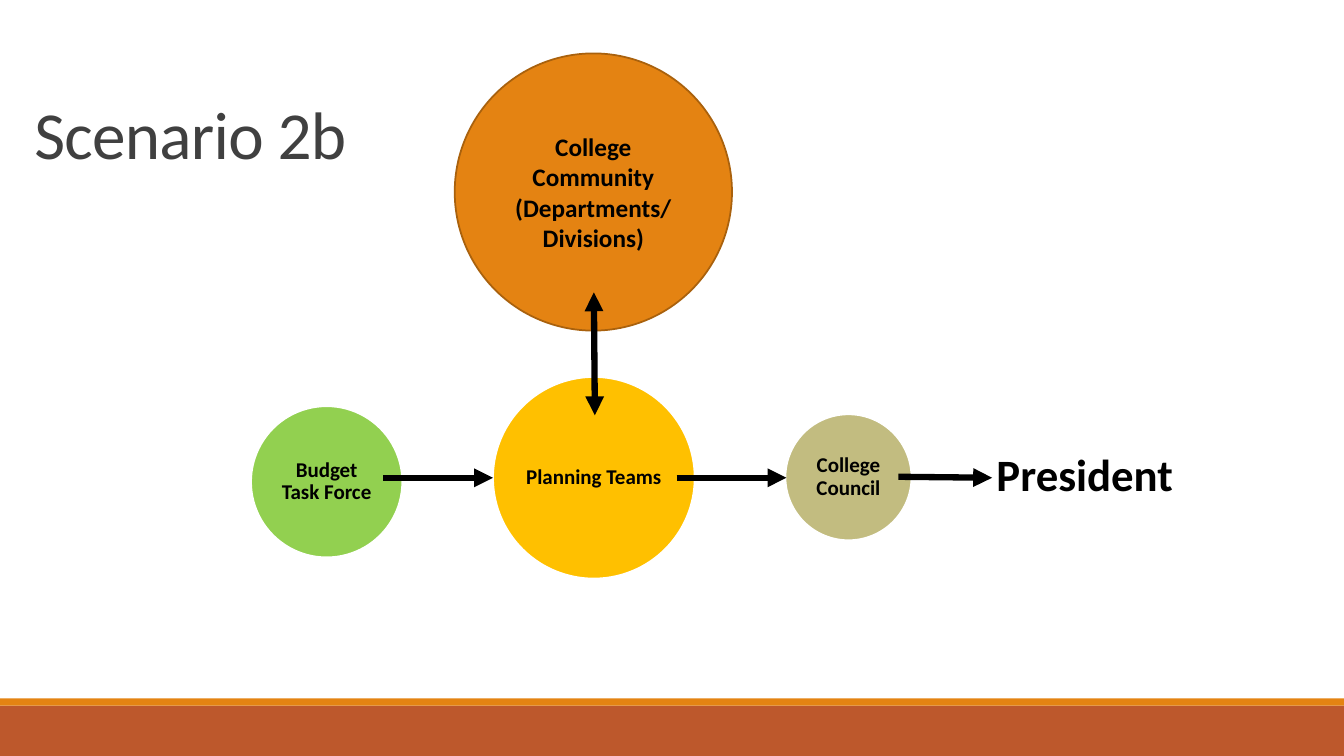
from dataclasses import dataclass
from typing import NamedTuple

from lxml import etree
from pptx import Presentation
from pptx.dml.color import RGBColor
from pptx.enum import shapes, text
from pptx.oxml.ns import qn
from pptx.util import Inches, Pt


@dataclass(frozen=True)
class Theme:
    font: str = "Calibri"
    title_color: str = "404040"
    ink: str = "000000"
    white: str = "FFFFFF"
    orange: str = "E48312"
    dark_orange: str = "A9610D"
    rust: str = "BD582C"
    green: str = "92D050"
    yellow: str = "FFC000"
    khaki: str = "C2BC80"
    title_size: float = 48
    goal_size: float = 32
    community_size: float = 18
    group_size: float = 15
    outline: float = 1.25
    arrow: float = 4.5


THEME = Theme()


class Bar(NamedTuple):
    top: float
    height: float
    fill: str


@dataclass(frozen=True)
class Circle:
    label: str
    left: float
    top: float
    size: float
    fill: str
    line: str = THEME.white
    font_size: float = THEME.group_size
    spacing: float = 0.9
    inset: float = 0.02
    preset: shapes.MSO_SHAPE = shapes.MSO_SHAPE.OVAL


class Arrow(NamedTuple):
    start: tuple[float, float]
    tip: tuple[float, float]
    both_ends: bool = False


BARS = [Bar(7, 0.5, THEME.rust), Bar(6.93, 0.07, THEME.orange)]
CIRCLES = [
    Circle("Budget Task Force", 2.49, 4.03, 1.5, THEME.green),
    Circle("Planning Teams", 4.89, 3.74, 2, THEME.yellow),
    Circle("College\nCommunity (Departments/\nDivisions)", 4.51, 0.53, 2.75,
           THEME.orange, THEME.dark_orange, THEME.community_size, 1, 0.1,
           shapes.MSO_SHAPE.FLOWCHART_CONNECTOR),
    Circle("College Council", 7.79, 4.11, 1.25, THEME.khaki),
]
ARROWS = [
    Arrow((5.89, 2.9), (5.9, 4.12), both_ends=True),
    Arrow((3.8, 4.74), (4.89, 4.74)),
    Arrow((6.71, 4.74), (7.8, 4.74)),
    Arrow((8.91, 4.73), (9.84, 4.74)),
]


def rgb(color: str) -> RGBColor:
    return RGBColor.from_string(color)


def write(tf, content: str, size: float, color: str = THEME.ink, bold: bool = True,
          align=text.PP_ALIGN.CENTER, anchor=text.MSO_ANCHOR.MIDDLE,
          spacing: float = 0.9, inset: float = 0.02) -> None:
    """Fill a text frame, one paragraph per line of content."""
    tf.text = content
    tf.word_wrap = True
    tf.auto_size = text.MSO_AUTO_SIZE.NONE
    tf.vertical_anchor = anchor
    tf.margin_left = tf.margin_right = Inches(inset)
    tf.margin_top = tf.margin_bottom = Inches(min(inset, 0.05))
    for p in tf.paragraphs:
        p.alignment = align
        p.line_spacing = spacing
        for r in p.runs:
            r.font.name = THEME.font
            r.font.size = Pt(size)
            r.font.bold = bold
            r.font.color.rgb = rgb(color)


def add_title(slide) -> None:
    sp = slide.shapes.title
    sp.left, sp.top, sp.width, sp.height = map(Inches, (0.24, 0.18, 11, 1.59))
    write(sp.text_frame, "Scenario 2b", THEME.title_size, THEME.title_color, False,
          text.PP_ALIGN.LEFT, text.MSO_ANCHOR.BOTTOM, 0.85, 0.1)
    sp.text_frame.paragraphs[0].runs[0].font._element.set("spc", "-50")


def add_bar(slide, bar: Bar, width: int) -> None:
    sp = slide.shapes.add_shape(shapes.MSO_SHAPE.RECTANGLE, 0, Inches(bar.top),
                                width, Inches(bar.height))
    sp.shadow.inherit = False
    sp.fill.solid()
    sp.fill.fore_color.rgb = rgb(bar.fill)
    sp.line.fill.background()


def add_circle(slide, circle: Circle) -> None:
    size = Inches(circle.size)
    sp = slide.shapes.add_shape(circle.preset, Inches(circle.left),
                                Inches(circle.top), size, size)
    sp.shadow.inherit = False
    sp.fill.solid()
    sp.fill.fore_color.rgb = rgb(circle.fill)
    sp.line.color.rgb = rgb(circle.line)
    sp.line.width = Pt(THEME.outline)
    write(sp.text_frame, circle.label, circle.font_size,
          spacing=circle.spacing, inset=circle.inset)


def add_president(slide) -> None:
    sp = slide.shapes.add_textbox(*map(Inches, (9.53, 4.18, 2.46, 1.11)))
    write(sp.text_frame, "President", THEME.goal_size, inset=0.19)


def add_arrow(slide, arrow: Arrow) -> None:
    sp = slide.shapes.add_connector(shapes.MSO_CONNECTOR.STRAIGHT,
                                    *map(Inches, arrow.start + arrow.tip))
    sp.line.color.rgb = rgb(THEME.ink)
    sp.line.width = Pt(THEME.arrow)
    ends = ("a:headEnd", "a:tailEnd") if arrow.both_ends else ("a:tailEnd",)
    for end in ends:
        etree.SubElement(sp.line._ln, qn(end), type="triangle")
    etree.SubElement(sp._element.spPr, qn("a:effectLst"))


def main() -> None:
    prs = Presentation()
    prs.slide_width, prs.slide_height = Inches(13.33), Inches(7.5)
    slide = prs.slides.add_slide(prs.slide_layouts[5])
    for bar in BARS:
        add_bar(slide, bar, prs.slide_width)
    add_title(slide)
    for circle in CIRCLES:
        add_circle(slide, circle)
    add_president(slide)
    for arrow in ARROWS:
        add_arrow(slide, arrow)
    prs.save("out.pptx")


if __name__ == "__main__":
    main()
